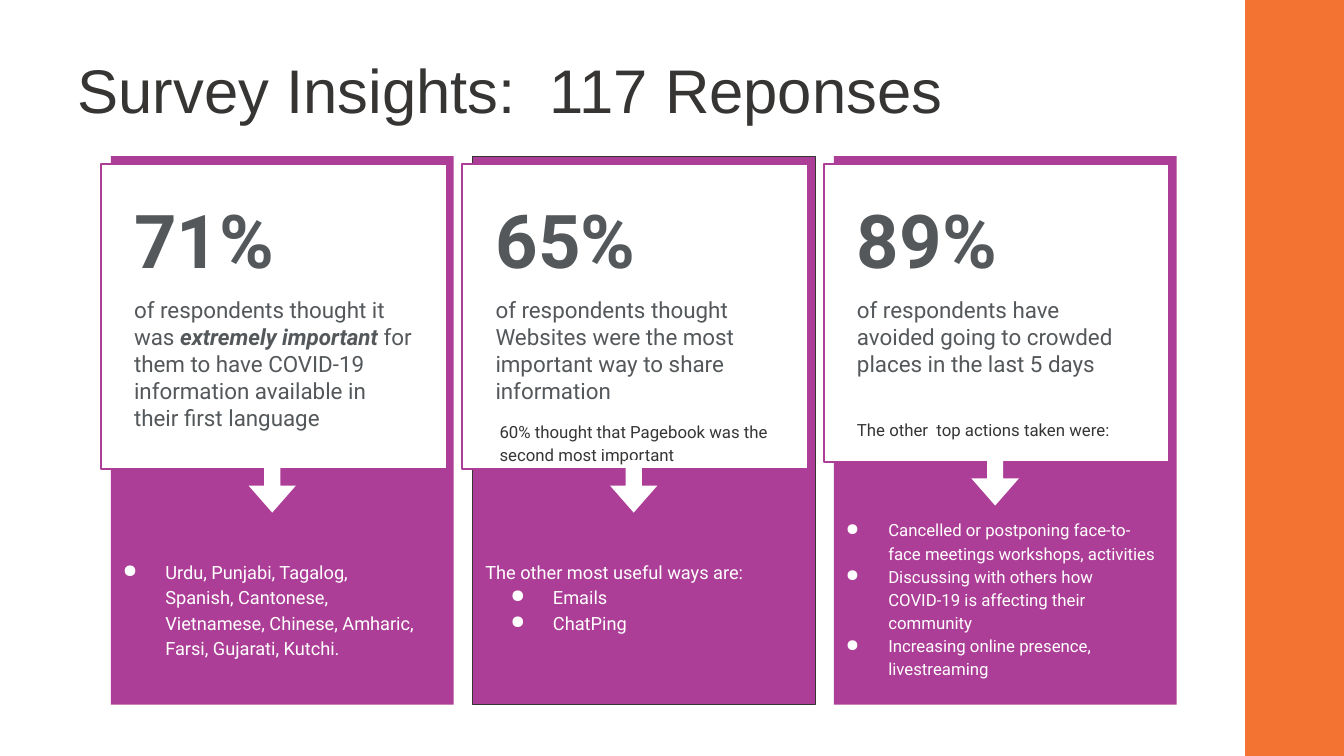
from dataclasses import dataclass

from lxml import etree
from pptx import Presentation
from pptx import util as u
from pptx.dml.color import RGBColor
from pptx.enum import shapes, text
from pptx.oxml import ns


@dataclass(frozen=True)
class Theme:
    plum: str = "AD3E97"
    orange: str = "F37432"
    white: str = "FFFFFF"
    grey: str = "54585A"
    ink: str = "363534"
    head: str = "Arial"
    body: str = "Roboto"
    title: int = 44
    figure: int = 53
    claim: int = 16
    list: int = 13
    small: int = 12


@dataclass(frozen=True)
class Grid:
    """Three equal columns; offsets are in inches from a column's left edge."""
    first: float = 1.1
    last: float = 8.27
    top: float = 1.55
    wide: float = 3.4
    high: float = 5.44

    def box(self, col: int, dx: float, dy: float, w: float, h: float) -> tuple:
        left = self.first + col * (self.last - self.first) / 2 + dx
        return tuple(u.Inches(n) for n in (left, self.top + dy, w, h))


@dataclass(frozen=True)
class Line:
    words: str
    bullet: bool = False
    strong: bool = False


@dataclass(frozen=True)
class Card:
    figure: str
    claim: tuple[Line, ...]
    items: tuple[Line, ...]
    size: int
    shift: float = -0.26
    drop: float = 3.86
    wide: float = 3.4
    high: float = 3.02
    note: str = ""
    inset: float = 0.1
    edge: bool = False


T = Theme()
G = Grid()
CARDS = (
    Card("71%",
         (Line("of respondents thought it was "),
          Line("extremely important", strong=True),
          Line(" for them to have COVID-19 information available in their "
               "first language")),
         (Line("Urdu, Punjabi, Tagalog, Spanish, Cantonese, Vietnamese, "
               "Chinese, Amharic, Farsi, Gujarati, Kutchi.", bullet=True),),
         T.list),
    Card("65%",
         (Line("of respondents thought Websites were the most important way "
               "to share information"),),
         (Line("The other most useful ways are:"),
          Line("Emails", bullet=True),
          Line("ChatPing", bullet=True)),
         T.list, shift=0, edge=True, inset=0.14,
         note="60% thought that Pagebook was the second most important"),
    Card("89%",
         (Line("of respondents have avoided going to crowded places in the "
               "last 5 days"),),
         (Line("Cancelled or postponing face-to-face meetings workshops, "
               "activities", bullet=True),
          Line("Discussing with others how COVID-19 is affecting their "
               "community", bullet=True),
          Line("Increasing online presence, livestreaming", bullet=True)),
         T.small, drop=3.45, wide=3.65, high=2.95,
         note="The other  top actions taken were:"),
)


def tint(code: str) -> RGBColor:
    return RGBColor.from_string(code)


def style(font, face: str, size: int, code: str, bold: bool = False) -> None:
    font.name, font.size, font.bold = face, u.Pt(size), bold
    font.color.rgb = tint(code)


def block(slide, kind, box: tuple, fill: str, line: str = "", pt: float = 0):
    shape = slide.shapes.add_shape(kind, *box)
    shape.shadow.inherit = False
    shape.fill.solid()
    shape.fill.fore_color.rgb = tint(fill)
    if line:
        shape.line.color.rgb = tint(line)
        shape.line.width = u.Pt(pt)
    else:
        shape.line.fill.background()
    return shape


def dot(para) -> None:
    """Give a paragraph a white round bullet with a hanging indent."""
    props = para._p.get_or_add_pPr()
    props.set("marL", str(u.Inches(0.67)))
    props.set("indent", str(u.Inches(-0.42)))
    hue = etree.SubElement(props, ns.qn("a:buClr"))
    etree.SubElement(hue, ns.qn("a:srgbClr"), val=T.white)
    etree.SubElement(props, ns.qn("a:buChar"), char="●")


def write(slide, box: tuple, paras: tuple, size: int, code: str,
          bold: bool = False, space: float = 1.0) -> None:
    """Fill a text box; each paragraph is a tuple of Lines, one per run."""
    frame = slide.shapes.add_textbox(*box).text_frame
    frame.word_wrap = True
    frame.margin_left = frame.margin_right = u.Inches(0.13)
    frame.margin_top = frame.margin_bottom = u.Inches(0.13)
    for i, lines in enumerate(paras):
        para = frame.add_paragraph() if i else frame.paragraphs[0]
        if lines[0].bullet:
            dot(para)
        para.line_spacing = space
        style(para.font, T.body, size, code, bold)
        for line in lines:
            run = para.add_run()
            run.text = line.words
            if line.strong:
                run.font.bold = run.font.italic = True


def draw(slide, col: int, card: Card) -> None:
    rect = shapes.MSO_SHAPE.RECTANGLE
    block(slide, rect, G.box(col, 0, 0, G.wide, G.high), T.plum,
          T.ink if card.edge else "", 0.75)
    block(slide, rect, G.box(col, -0.1, 0.08, 3.43, card.high), T.white,
          T.plum, 1.5)
    write(slide, G.box(col, 0.1, 0.25, 3.04, 0.9), ((Line(card.figure),),),
          T.figure, T.grey, bold=True)
    write(slide, G.box(col, 0.1, 1.26, 3.04, 1.26), (card.claim,),
          T.claim, T.grey)
    if card.note:
        write(slide, G.box(col, card.inset, 2.47, 3.04, 0.64),
              ((Line(card.note),),), T.small, T.ink, space=1.15)
    arrow = block(slide, shapes.MSO_SHAPE.RIGHT_ARROW,
                  G.box(col, 1.34, card.high + 0.02, 0.52, 0.47), T.white)
    arrow.rotation = 90
    arrow.adjustments[0], arrow.adjustments[1] = 0.34, 0.57
    write(slide, G.box(col, card.shift, card.drop, card.wide, 1.45),
          tuple((item,) for item in card.items), card.size, T.white,
          space=1.15)


def head(slide, words: str) -> None:
    title = slide.shapes.title
    title.left, title.top = u.Inches(0.67), u.Inches(0.3)
    title.width, title.height = u.Inches(10.11), u.Inches(1.25)
    frame = title.text_frame
    frame.text = words
    frame.vertical_anchor = text.MSO_ANCHOR.MIDDLE
    frame.auto_size = text.MSO_AUTO_SIZE.NONE
    para = frame.paragraphs[0]
    para.alignment = text.PP_ALIGN.LEFT
    para.line_spacing = 0.9
    style(para.font, T.head, T.title, T.ink)


def main() -> None:
    deck = Presentation()
    deck.slide_width, deck.slide_height = u.Inches(13.33), u.Inches(7.5)
    slide = deck.slides.add_slide(deck.slide_layouts[5])
    band = u.Inches(12.35), 0, u.Inches(0.98), deck.slide_height
    block(slide, shapes.MSO_SHAPE.RECTANGLE, band, T.orange)
    head(slide, "Survey Insights:  117 Reponses")
    for col, card in enumerate(CARDS):
        draw(slide, col, card)
    deck.save("out.pptx")


if __name__ == "__main__":
    main()
